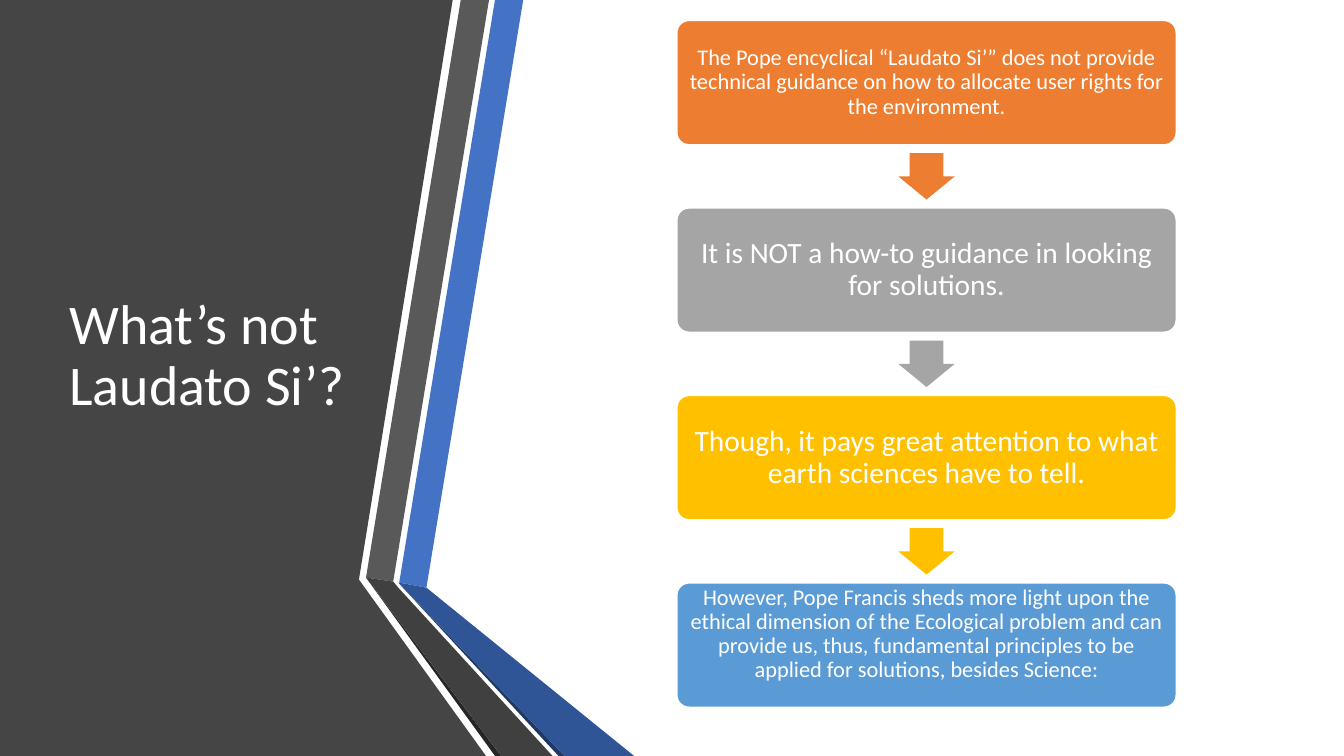
from pptx import Presentation
from pptx import util as u
from pptx.dml.color import RGBColor
from pptx.enum import shapes, text

THEME = {
    "font": "Calibri",
    "white": "FFFFFF",
    "title_size": 40,
    "large": 21,
    "small": 16,
}

TITLE = "What’s not Laudato Si’?"

STEPS = [
    ("The Pope encyclical “Laudato Si’” does not provide technical guidance on how "
     "to allocate user rights for the environment.", "small", "ED7D31", 0.07, 0.07),
    ("It is NOT a how-to guidance in looking for solutions.", "large", "A5A5A5", 0.09, 0.09),
    ("Though, it pays great attention to what earth sciences have to tell.",
     "large", "FFC000", 0.09, 0.09),
    ("However, Pope Francis sheds more light upon the ethical dimension of the "
     "Ecological problem and can provide us, thus, fundamental principles to be "
     "applied for solutions, besides Science:", "small", "5B9BD5", 0.07, 0.28),
]

PANELS = [
    ("454545", [(0, 0), (4.49, 0), (3.56, 5.75), (4.82, 7.5), (0, 7.5)]),
    ("4472C4", [(3.96, 5.78), (4.23, 5.83), (5.19, 0), (4.91, 0)]),
    ("595959", [(4.85, 0), (4.57, 0), (3.63, 5.73), (3.9, 5.77)]),
    ("262626", [(3.63, 5.73), (4.91, 7.5), (4.97, 7.5)]),
    ("203864", [(3.96, 5.79), (5.54, 7.5), (5.6, 7.5)]),
    ("2F5597", [(3.96, 5.79), (5.6, 7.5), (6.29, 7.5), (4.23, 5.83), (3.96, 5.78)]),
    ("404040", [(5.48, 7.5), (3.95, 5.83), (3.9, 5.77), (3.63, 5.73), (4.97, 7.5)]),
]

BOX_LEFT, BOX_TOP, BOX_WIDTH, BOX_HEIGHT = 6.71, 0.2, 4.96, 1.24
STEP_PITCH = 1.86
ARROW_WIDTH, ARROW_HEIGHT = 0.56, 0.46


def paint(shape, color):
    shape.shadow.inherit = False
    shape.fill.solid()
    shape.fill.fore_color.rgb = RGBColor.from_string(color)
    shape.line.fill.background()


def write(shape, words, size, align):
    frame = shape.text_frame
    frame.word_wrap = True
    frame.vertical_anchor = text.MSO_ANCHOR.MIDDLE
    paragraph = frame.paragraphs[0]
    paragraph.text = words
    paragraph.alignment = align
    paragraph.line_spacing = 0.9
    paragraph.font.name = THEME["font"]
    paragraph.font.size = u.Pt(THEME[size])
    paragraph.font.color.rgb = RGBColor.from_string(THEME["white"])
    return frame


def add_panel(slide, color, points):
    corners = [(u.Inches(x), u.Inches(y)) for x, y in points]
    builder = slide.shapes.build_freeform(*corners[0])
    builder.add_line_segments(corners[1:], close=True)
    paint(builder.convert_to_shape(), color)


def add_step(slide, top, words, size, color, inset, bottom_inset):
    box = slide.shapes.add_shape(
        shapes.MSO_SHAPE.ROUNDED_RECTANGLE,
        u.Inches(BOX_LEFT), u.Inches(top), u.Inches(BOX_WIDTH), u.Inches(BOX_HEIGHT))
    box.adjustments[0] = 0.1
    paint(box, color)
    box.line.color.rgb = RGBColor.from_string(THEME["white"])
    box.line.width = u.Pt(1.5)
    frame = write(box, words, size, text.PP_ALIGN.CENTER)
    frame.margin_left = frame.margin_right = frame.margin_top = u.Inches(inset)
    frame.margin_bottom = u.Inches(bottom_inset)


def add_arrow(slide, box_top, color):
    gap = STEP_PITCH - BOX_HEIGHT
    left = BOX_LEFT + (BOX_WIDTH - ARROW_WIDTH) / 2
    top = box_top + BOX_HEIGHT + (gap - ARROW_HEIGHT) / 2
    arrow = slide.shapes.add_shape(
        shapes.MSO_SHAPE.DOWN_ARROW,
        u.Inches(left), u.Inches(top), u.Inches(ARROW_WIDTH), u.Inches(ARROW_HEIGHT))
    arrow.adjustments[0] = 0.6
    arrow.adjustments[1] = 0.5
    paint(arrow, color)


def main():
    presentation = Presentation()
    presentation.slide_width = u.Inches(13.33)
    presentation.slide_height = u.Inches(7.5)
    slide = presentation.slides.add_slide(presentation.slide_layouts[6])

    for color, points in PANELS:
        add_panel(slide, color, points)

    title = slide.shapes.add_textbox(
        u.Inches(0.59), u.Inches(0.75), u.Inches(3.04), u.Inches(5.58))
    write(title, TITLE, "title_size", text.PP_ALIGN.LEFT)

    for index, (words, size, color, inset, bottom_inset) in enumerate(STEPS):
        top = BOX_TOP + index * STEP_PITCH
        add_step(slide, top, words, size, color, inset, bottom_inset)
        if index < len(STEPS) - 1:
            add_arrow(slide, top, color)

    presentation.save("out.pptx")


if __name__ == "__main__":
    main()
